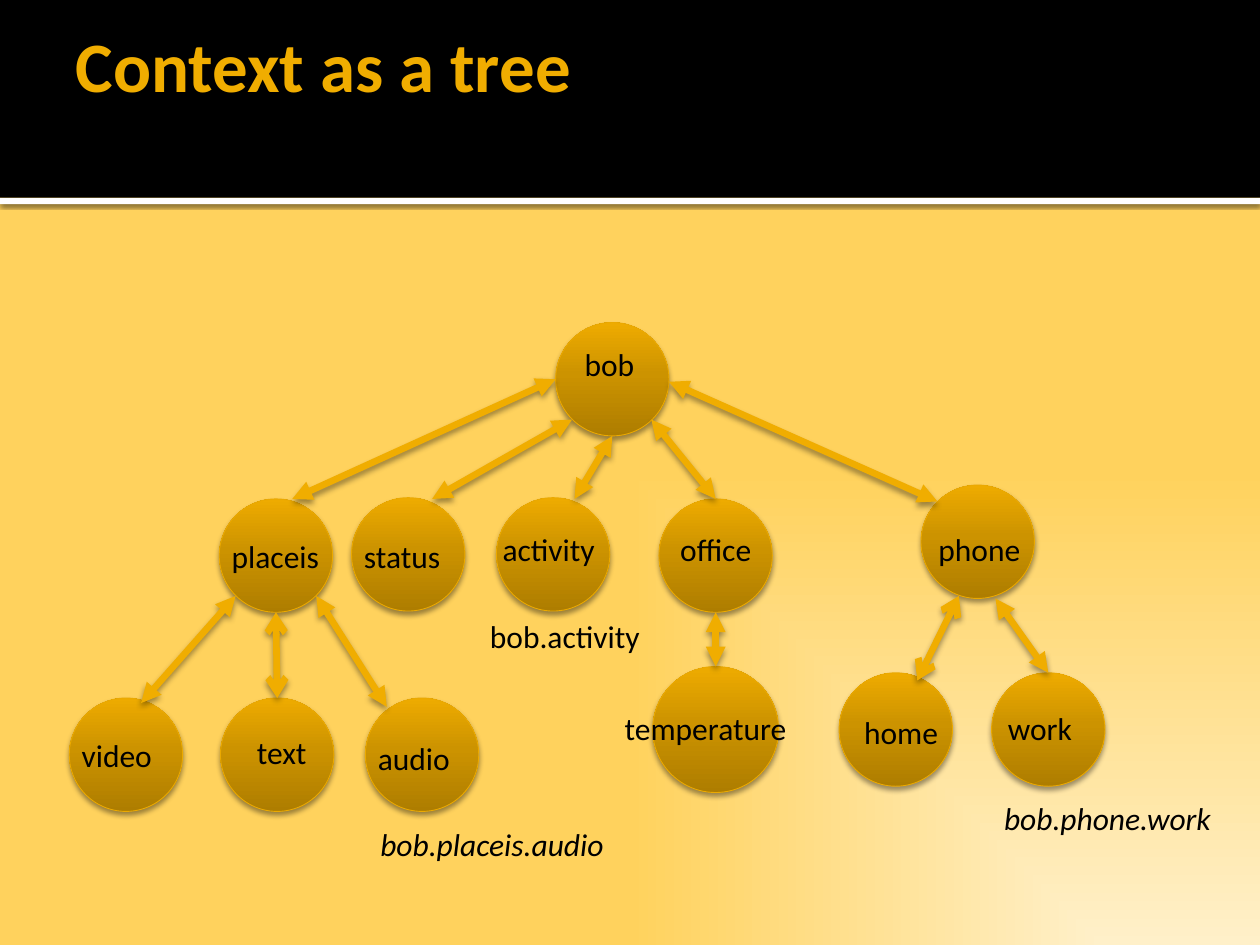
from lxml.etree import SubElement
from pptx import Presentation
from pptx.dml.color import RGBColor
from pptx.enum.shapes import MSO_CONNECTOR, MSO_SHAPE
from pptx.enum.text import MSO_ANCHOR, MSO_AUTO_SIZE, PP_ALIGN
from pptx.oxml.ns import qn
from pptx.util import Pt

PX = 9144  # 100 px to the inch
WIDTH, HEIGHT = 1000, 750
FONT = "Calibri"

BLACK = RGBColor(0x00, 0x00, 0x00)
WHITE = RGBColor(0xFF, 0xFF, 0xFF)
GOLD = RGBColor(0xF0, 0xAD, 0x00)
RIM = RGBColor(0xEB, 0xA9, 0x00)
NODE_STOPS = [(0, RGBColor(0xAE, 0x7D, 0x00)), (55, RGBColor(0xCC, 0x93, 0x00)),
              (100, RGBColor(0xEE, 0xAB, 0x00))]
PAGE_STOPS = [(0, RGBColor(0xFF, 0xF0, 0xC9)), (100, RGBColor(0xFF, 0xD2, 0x5D))]

# name: circle x, y, diameter; label offset x, y from the circle; label width
NODES = {
    "placeis": (119, 140, 90, 0, 25, 92),
    "status": (224, 139, 90, 0, 26, 99),
    "activity": (339, 139, 90, -5, 21, 97),
    "office": (468, 140, 90, 7, 20, 78),
    "phone": (676, 129, 90, 4, 31, 86),
    "video": (0, 298, 90, 0, 25, 77),
    "text": (120, 298, 90, 19, 23, 62),
    "audio": (235, 298, 90, 0, 28, 78),
    "temperature": (463, 273, 100, -32, 29, 152),
    "home": (611, 278, 90, 10, 27, 81),
    "work": (732, 278, 90, 3, 24, 72),
}
ROOT = (386, 0, 90)
# from x, y; to x, y; arrowhead
EDGES = [
    (386, 45, 177, 140, "triangle"),  # bob - placeis
    (399, 77, 288, 140, "triangle"),  # bob - status
    (431, 90, 401, 140, "triangle"),  # bob - activity
    (462, 77, 513, 140, "triangle"),  # bob - office
    (476, 47, 689, 142, "triangle"),  # bob - phone
    (132, 217, 57, 302, "triangle"),  # placeis - video
    (165, 298, 164, 230, "arrow"),    # text - placeis
    (196, 217, 252, 305, "triangle"),  # placeis - audio
    (513, 230, 513, 273, "triangle"),  # office - temperature
    (706, 217, 673, 284, "arrow"),    # phone - home
    (735, 219, 777, 278, "triangle"),  # phone - work
]
# text, x, y, width, italic
PATHS = [
    ("bob.placeis.audio", 237, 394, 204, True),
    ("bob.phone.work", 732, 373, 189, True),
    ("bob.activity", 324, 229, 144, False),
]


def emu(*lengths):
    return [round(n * PX) for n in lengths]


def use_gradient(parent, stops, angle=None):
    """Swap the solid fill of parent for a linear gradient, or one from the lower right corner."""
    solid = parent.find(qn("a:solidFill"))
    grad = SubElement(parent, qn("a:gradFill"), rotWithShape="1")
    parent.replace(solid, grad)
    gs_list = SubElement(grad, qn("a:gsLst"))
    for pos, color in stops:
        gs = SubElement(gs_list, qn("a:gs"), pos=str(pos * 1000))
        SubElement(gs, qn("a:srgbClr"), val=str(color))
    if angle is None:
        way = SubElement(grad, qn("a:path"), path="rect")
        SubElement(way, qn("a:fillToRect"), l="100000", t="100000")
    else:
        SubElement(grad, qn("a:lin"), ang=str(angle * 60000), scaled="0")


def add_shadow(sp, alpha, blur, dist):
    """Drop a black shadow straight down; call it after fill and line are set."""
    effects = SubElement(sp._element.spPr, qn("a:effectLst"))
    shadow = SubElement(effects, qn("a:outerShdw"), blurRad=str(Pt(blur)),
                        dist=str(Pt(dist)), dir="5400000", rotWithShape="0")
    color = SubElement(shadow, qn("a:srgbClr"), val=str(BLACK))
    SubElement(color, qn("a:alpha"), val=str(alpha * 1000))


def style_text(p, size=18, color=BLACK, bold=False, italic=False):
    p.alignment = PP_ALIGN.LEFT
    f = p.font
    f.name, f.size, f.bold, f.italic = FONT, Pt(size), bold, italic
    f.color.rgb = color


def add_bar(s, x, y, w, h, color):
    sp = s.shapes.add_shape(MSO_SHAPE.RECTANGLE, *emu(x, y, w, h))
    sp.fill.solid()
    sp.fill.fore_color.rgb = color
    sp.line.fill.background()
    return sp


def add_circle(s, x, y, d):
    sp = s.shapes.add_shape(MSO_SHAPE.OVAL, *emu(x, y, d, d))
    sp.fill.solid()
    use_gradient(sp._element.spPr, NODE_STOPS, 270)
    sp.line.color.rgb = RIM
    sp.line.width = Pt(0.5)
    add_shadow(sp, 38, 3.1, 2)
    return sp


def add_label(s, text, x, y, w, italic=False):
    tf = s.shapes.add_textbox(*emu(x, y, w, 40)).text_frame
    tf.word_wrap = False
    tf.auto_size = MSO_AUTO_SIZE.SHAPE_TO_FIT_TEXT
    tf.text = text
    style_text(tf.paragraphs[0], italic=italic)


def add_edge(s, x1, y1, x2, y2, head):
    line = s.shapes.add_connector(MSO_CONNECTOR.STRAIGHT, *emu(x1, y1, x2, y2))
    line.line.color.rgb = GOLD
    line.line.width = Pt(3.78)
    ln = line.line._get_or_add_ln()
    for end in ("a:headEnd", "a:tailEnd"):
        SubElement(ln, qn(end), type=head)
    add_shadow(line, 38, 3.5, 2)


def add_header(s, x, y, w, h):
    bar_h = h - 5
    rule = add_bar(s, x, y + bar_h, w, 5, WHITE)
    add_shadow(rule, 60, 2.5, 0.8)
    add_bar(s, x, y, w, bar_h, BLACK).shadow.inherit = False

    title = s.shapes.title
    s.shapes._spTree.append(title._element)  # in front of the bars
    title.left, title.top, title.width, title.height = emu(x + 50, y + 17, w - 100, 137)
    tf = title.text_frame
    tf.auto_size = MSO_AUTO_SIZE.NONE
    tf.vertical_anchor = MSO_ANCHOR.TOP
    tf.margin_left, tf.margin_top, tf.margin_right, tf.margin_bottom = emu(10, 0, 5, 5)
    tf.text = "Context as a tree"
    style_text(tf.paragraphs[0], 40.5, GOLD, bold=True)


def add_tree(s, x, y):
    root_x, root_y, root_d = ROOT
    tf = add_circle(s, x + root_x, y + root_y, root_d).text_frame
    tf.text = "bob"
    tf.vertical_anchor = MSO_ANCHOR.TOP
    style_text(tf.paragraphs[0])

    for cx, cy, d, *_ in NODES.values():
        add_circle(s, x + cx, y + cy, d)
    for name, (cx, cy, _, dx, dy, w) in NODES.items():
        add_label(s, name, x + cx + dx, y + cy + dy, w)
    for x1, y1, x2, y2, head in EDGES:
        add_edge(s, x + x1, y + y1, x + x2, y + y2, head)
    for text, px, py, w, italic in PATHS:
        add_label(s, text, x + px, y + py, w, italic)


def main():
    prs = Presentation()
    prs.slide_width, prs.slide_height = emu(WIDTH, HEIGHT)
    s = prs.slides.add_slide(prs.slide_layouts[5])
    s.background.fill.solid()
    use_gradient(s._element.find(".//" + qn("p:bgPr")), PAGE_STOPS)
    add_header(s, 0, 0, WIDTH, 162)
    add_tree(s, 55, 256)
    prs.save("out.pptx")


if __name__ == "__main__":
    main()
